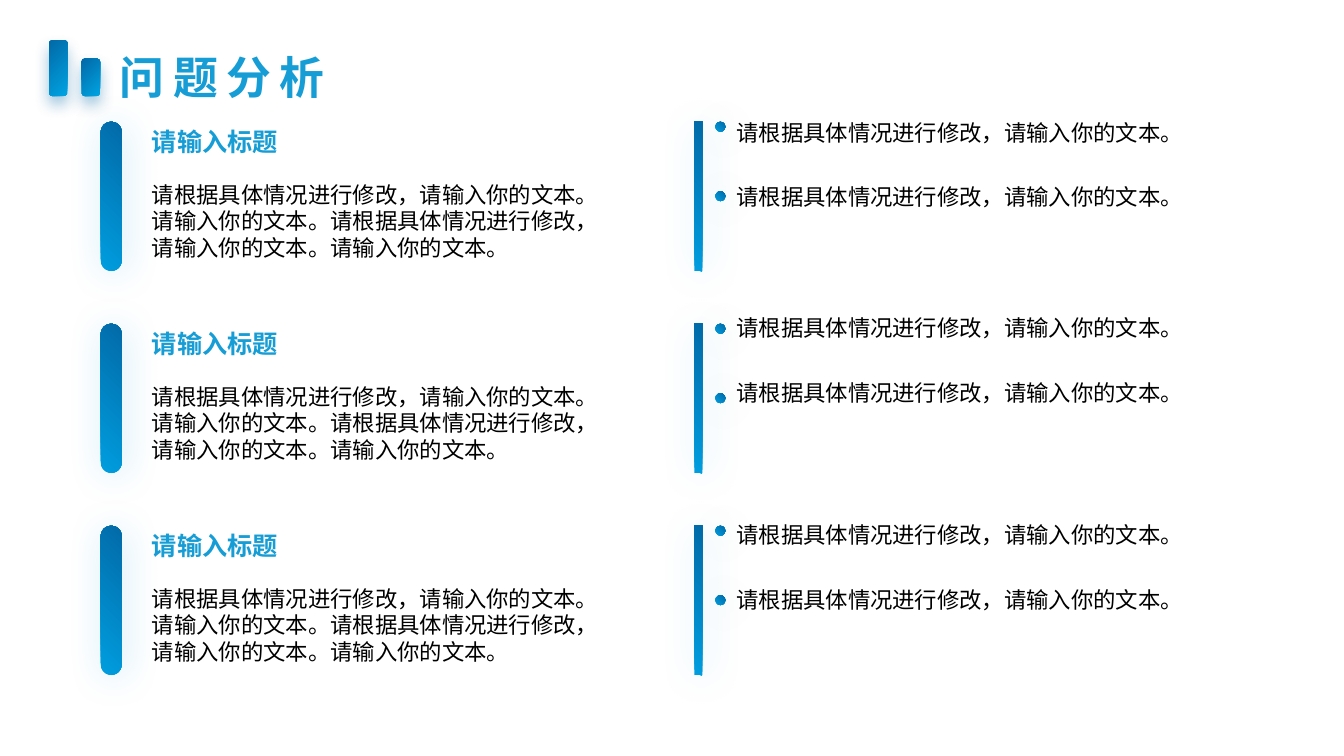
from lxml import etree
from pptx import Presentation
from pptx import util as u
from pptx.dml.color import RGBColor
from pptx.enum import shapes, text
from pptx.oxml import ns

Cm = u.Cm
FONT = "Noto Sans CJK SC"
BLUE = RGBColor(0x16, 0x9D, 0xD5)
BLACK = RGBColor(0, 0, 0)
DARK = RGBColor(0x02, 0x6A, 0xA8)
LIGHT = RGBColor(0x00, 0x9E, 0xDF)
SKY = RGBColor(0x00, 0xA3, 0xE2)
ROUND = shapes.MSO_SHAPE.ROUNDED_RECTANGLE
OVAL = shapes.MSO_SHAPE.OVAL
POINT = "请根据具体情况进行修改，请输入你的文本。"
BODY = POINT + "请输入你的文本。" + POINT + "请输入你的文本。"
PITCH = 5.09


def place(item, box):
    """Move an item to a box given in centimetres."""
    item.left, item.top, item.width, item.height = map(Cm, box)


def write(item, words, size=16, color=BLACK, bold=False, wrap=False, gap=0):
    """Fill an item with formatted text."""
    frame = item.text_frame
    frame.word_wrap = wrap
    frame.auto_size = text.MSO_AUTO_SIZE.SHAPE_TO_FIT_TEXT
    frame.vertical_anchor = text.MSO_ANCHOR.TOP
    para = frame.paragraphs[0]
    para.alignment = text.PP_ALIGN.LEFT
    run = para.add_run()
    run.text = words
    font = run.font
    font.name, font.size, font.bold = FONT, u.Pt(size), bold
    font.color.rgb = color
    props = run._r.get_or_add_rPr()
    etree.SubElement(props, ns.qn("a:ea"), typeface=FONT)
    if gap:
        props.set("spc", str(gap * 100))


def label(slide, box, words, **form):
    """Add a text box."""
    write(slide.shapes.add_textbox(*map(Cm, box)), words, **form)


def glow(shape, color, alpha, blur, dist, turn):
    """Give a shape a soft coloured shadow."""
    shape.shadow.inherit = False
    effects = shape._element.spPr.find(ns.qn("a:effectLst"))
    shade = etree.SubElement(
        effects, ns.qn("a:outerShdw"), blurRad=str(u.Pt(blur)),
        dist=str(u.Pt(dist)), dir=str(turn * 60000), algn="t", rotWithShape="0")
    tone = etree.SubElement(shade, ns.qn("a:srgbClr"), val=str(color))
    etree.SubElement(tone, ns.qn("a:alpha"), val=str(alpha * 1000))


def mark(slide, kind, box, round=None, start=LIGHT, angle=45,
         shade=(SKY, 18, 27, 3, 45)):
    """Add a gradient shape with a shadow."""
    shape = slide.shapes.add_shape(kind, *map(Cm, box))
    if round is not None:
        shape.adjustments[0] = round
    shape.line.fill.background()
    shape.fill.gradient()
    shape.fill.gradient_angle = angle
    for stop, color in zip(shape.fill.gradient_stops, (start, DARK)):
        stop.color.rgb = color
    glow(shape, *shade)
    return shape


def header(slide, x, y):
    """Draw the title and its two bars."""
    title = slide.shapes.title
    place(title, (x + 1.53, y + 0.1, 5.89, 1.63))
    write(title, "问题分析", size=32, color=BLUE, bold=True, gap=6)
    for dx, high in ((0, 1.4), (0.82, 0.94)):
        bar = mark(slide, ROUND, (x + dx, y + 1.4 - high, 0.46, high),
                   start=SKY, angle=315, shade=(DARK, 40, 11, 6, 90))
        bar.rotation = 180


def topic(slide, x, y):
    """Draw a heading with its paragraph beside a bar."""
    mark(slide, ROUND, (x, y, 0.53, 3.76), round=0.5)
    label(slide, (x + 1.04, y + 1.36, 11.68, 2.31), BODY, wrap=True)
    label(slide, (x + 1.04, y, 3.81, 1.02), "请输入标题",
          size=18, color=BLUE, bold=True)


def points(slide, x, y, rise):
    """Draw two dotted points beside a thin bar."""
    mark(slide, ROUND, (x, y, 0.2, 3.76), round=0)
    for i in range(2):
        mark(slide, OVAL, (x + 0.53, y + 1.75 * i, 0.25, 0.25))
        label(slide, (x + 0.81, y - rise + 1.63 * i, 11.79, 0.94), POINT)


def main():
    """Build and save the slide."""
    deck = Presentation()
    deck.slide_width, deck.slide_height = Cm(33.87), Cm(19.05)
    slide = deck.slides.add_slide(deck.slide_layouts[5])
    header(slide, 1.24, 1.02)
    for i, rise in enumerate((0.2, 0.36, 0.24)):
        y = 3.07 + PITCH * i
        topic(slide, 2.54, y)
        points(slide, 17.5, y, rise)
    deck.save("out.pptx")


if __name__ == "__main__":
    main()
